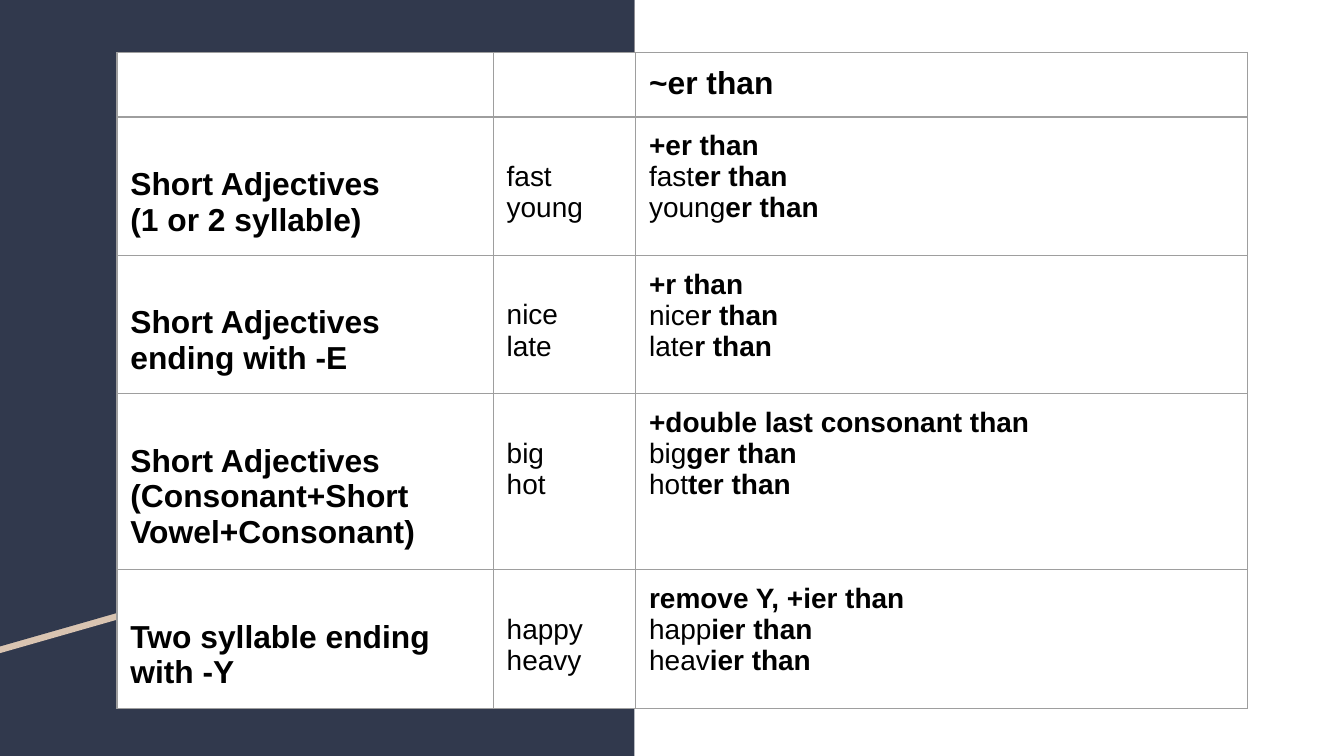
import dataclasses

import pptx
import pptx.dml.color
import pptx.enum.shapes
import pptx.oxml
import pptx.oxml.ns
import pptx.util

Inches = pptx.util.Inches
Pt = pptx.util.Pt


@dataclasses.dataclass(frozen=True)
class Theme:
    navy: str = "31394D"
    sand: str = "D9C4B1"
    paper: str = "FFFFFF"
    ink: str = "000000"
    grid: str = "9E9E9E"
    font: str = "Arial"
    heading_size: int = 17
    example_size: int = 15
    grid_width: float = 0.75


THEME = Theme()
PANEL_WIDTH = 4.72
SLIDE_WIDTH = 10
SLIDE_HEIGHT = SLIDE_WIDTH * 9 / 16
CELL_INSET = 0.1
EMPTY_INSET = 0.05
HEADING_TOP = 0.37
EXAMPLE_TOP = 0.33
COLUMN_WIDTHS = [2.8, 1.06, 4.55]
ROW_HEIGHTS = [0.48, 1.03, 1.03, 1.31, 1.03]

RULES = [
    (["Short Adjectives", "(1 or 2 syllable)"], ["fast", "young"],
     "+er than", [("fast", "er than"), ("young", "er than")]),
    (["Short Adjectives ending with -E"], ["nice", "late"],
     "+r than", [("nice", "r than"), ("late", "r than")]),
    (["Short Adjectives", "(Consonant+Short Vowel+Consonant)"], ["big", "hot"],
     "+double last consonant than", [("big", "ger than"), ("hot", "ter than")]),
    (["Two syllable ending with -Y"], ["happy", "heavy"],
     "remove Y, +ier than", [("happ", "ier than"), ("heav", "ier than")]),
]


def rgb(color):
    return pptx.dml.color.RGBColor.from_string(color)


def paint(shape, color):
    shape.shadow.inherit = False
    shape.fill.solid()
    shape.fill.fore_color.rgb = rgb(color)
    shape.line.fill.background()


def add_panel(slide):
    panel = slide.shapes.add_shape(
        pptx.enum.shapes.MSO_SHAPE.RECTANGLE, 0, 0,
        Inches(PANEL_WIDTH), Inches(SLIDE_HEIGHT))
    paint(panel, THEME.navy)


def add_slanted_panel(slide, top, color):
    corners = [(PANEL_WIDTH, top), (PANEL_WIDTH, top + 3.46), (0, top + 4.81)]
    outline = slide.shapes.build_freeform(0, Inches(top))
    outline.add_line_segments([(Inches(x), Inches(y)) for x, y in corners])
    paint(outline.convert_to_shape(), color)


def add_borders(cell):
    properties = cell._tc.get_or_add_tcPr()
    for side in ("lnL", "lnR", "lnT", "lnB"):
        properties.append(pptx.oxml.parse_xml(
            f'<a:{side} {pptx.oxml.ns.nsdecls("a")} w="{Pt(THEME.grid_width)}">'
            f'<a:solidFill><a:srgbClr val="{THEME.grid}"/></a:solidFill></a:{side}>'))


def style_cell(cell, filled):
    add_borders(cell)
    if filled:
        cell.fill.solid()
        cell.fill.fore_color.rgb = rgb(THEME.paper)
    else:
        cell.fill.background()
    cell.margin_left = cell.margin_right = Inches(CELL_INSET)
    cell.margin_top = cell.margin_bottom = Inches(EMPTY_INSET)


def write_lines(cell, lines, size, top=CELL_INSET):
    cell.margin_top = Inches(top)
    cell.margin_bottom = Inches(CELL_INSET)
    frame = cell.text_frame
    for index, line in enumerate(lines):
        paragraph = frame.add_paragraph() if index else frame.paragraphs[0]
        for text, bold in line:
            run = paragraph.add_run()
            run.text = text
            run.font.name = THEME.font
            run.font.size = Pt(size)
            run.font.bold = bold
            run.font.color.rgb = rgb(THEME.ink)


def write_rule(cells, rule):
    category, adjectives, ending, comparatives = rule
    category_cell, adjective_cell, comparative_cell = cells
    write_lines(category_cell, [[(text, True)] for text in category],
                THEME.heading_size, HEADING_TOP)
    write_lines(adjective_cell, [[(text, False)] for text in adjectives],
                THEME.example_size, EXAMPLE_TOP)
    write_lines(comparative_cell,
                [[(ending, True)]]
                + [[(stem, False), (suffix, True)] for stem, suffix in comparatives],
                THEME.example_size)


def add_rules_table(slide):
    table = slide.shapes.add_table(
        len(ROW_HEIGHTS), len(COLUMN_WIDTHS), Inches(0.87), Inches(0.39),
        Inches(sum(COLUMN_WIDTHS)), Inches(sum(ROW_HEIGHTS))).table
    table.first_row = False
    table.horz_banding = False
    for column, width in zip(table.columns, COLUMN_WIDTHS):
        column.width = Inches(width)
    for row, height in zip(table.rows, ROW_HEIGHTS):
        row.height = Inches(height)
        for index, cell in enumerate(row.cells):
            style_cell(cell, filled=index < 2)
    write_lines(table.cell(0, 2), [[("~er than", True)]], THEME.heading_size)
    for row_index, rule in enumerate(RULES, start=1):
        write_rule(table.rows[row_index].cells, rule)


def main():
    deck = pptx.Presentation()
    deck.slide_width = Inches(SLIDE_WIDTH)
    deck.slide_height = Inches(SLIDE_HEIGHT)
    slide = deck.slides.add_slide(deck.slide_layouts[6])
    add_panel(slide)
    add_slanted_panel(slide, 0.05, THEME.sand)
    add_slanted_panel(slide, 0, THEME.navy)
    add_rules_table(slide)
    deck.save("out.pptx")


if __name__ == "__main__":
    main()
